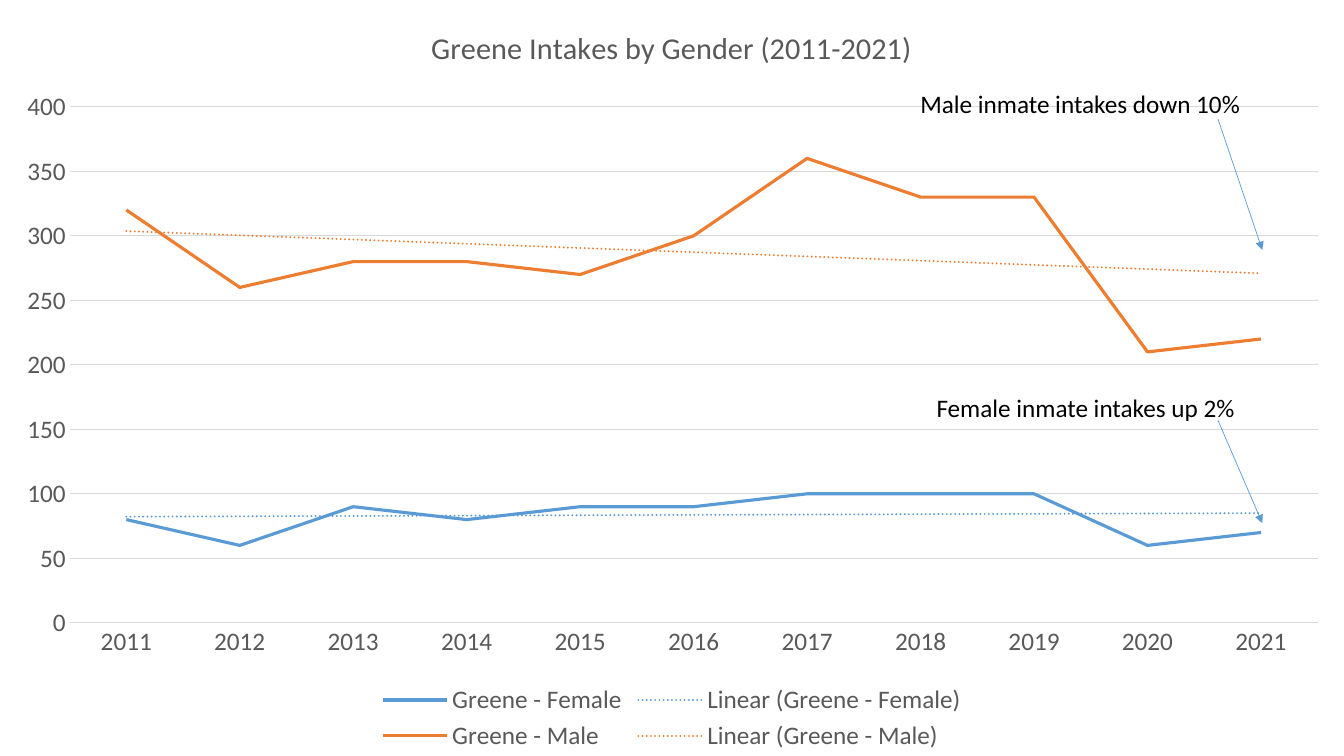
from lxml import etree
from pptx import Presentation
from pptx.chart.data import CategoryChartData
from pptx.dml.color import RGBColor
from pptx.enum.chart import XL_CHART_TYPE, XL_LEGEND_POSITION, XL_MARKER_STYLE, XL_TICK_MARK
from pptx.enum.text import MSO_AUTO_SIZE
from pptx.oxml import parse_xml
from pptx.oxml.ns import nsdecls, qn
from pptx.util import Inches, Pt

FONT = "Calibri"
BLUE, ORANGE, GRAY, GRID, BLACK = "5B9BD5", "ED7D31", "595959", "D9D9D9", "000000"
WIDTH, HEIGHT = 13.33, 7.5
YEARS = [str(year) for year in range(2011, 2022)]
INTAKES = [
    ("Greene - Female", BLUE, [80, 60, 90, 80, 90, 90, 100, 100, 100, 60, 70]),
    ("Greene - Male", ORANGE, [320, 260, 280, 280, 270, 300, 360, 330, 330, 210, 220]),
]


def rgb(color):
    return RGBColor.from_string(color)


def set_font(font, size, color):
    font.name, font.size, font.bold = FONT, Pt(size), False
    font.color.rgb = rgb(color)


def set_line(line, color, width):
    line.color.rgb = rgb(color)
    line.width = Pt(width)


def add_trend(series, color):
    trend = parse_xml(
        f'<c:trendline {nsdecls("c", "a")}><c:spPr><a:ln w="{Pt(1.5)}" cap="rnd">'
        f'<a:solidFill><a:srgbClr val="{color}"/></a:solidFill><a:prstDash val="sysDot"/>'
        '</a:ln></c:spPr><c:trendlineType val="linear"/>'
        '<c:dispRSqr val="0"/><c:dispEq val="0"/></c:trendline>')
    series._element.find(qn("c:cat")).addprevious(trend)


def place_plot(chart, x, y, w, h):
    """Fix the inner plot area, given in inches on the slide-sized chart."""
    plot_area = chart._chartSpace.chart.plotArea
    for layout in plot_area.findall(qn("c:layout")):
        plot_area.remove(layout)
    plot_area.insert(0, parse_xml(
        f'<c:layout {nsdecls("c")}><c:manualLayout><c:layoutTarget val="inner"/>'
        '<c:xMode val="edge"/><c:yMode val="edge"/>'
        f'<c:x val="{x / WIDTH}"/><c:y val="{y / HEIGHT}"/>'
        f'<c:w val="{w / WIDTH}"/><c:h val="{h / HEIGHT}"/>'
        '</c:manualLayout></c:layout>'))


def style_axes(chart):
    years, counts = chart.category_axis, chart.value_axis
    for axis in (years, counts):
        axis.major_tick_mark = axis.minor_tick_mark = XL_TICK_MARK.NONE
        set_font(axis.tick_labels.font, 18, GRAY)
    set_line(years.format.line, GRID, 0.75)
    counts.format.line.fill.background()
    counts.minimum_scale, counts.maximum_scale, counts.major_unit = 0, 400, 50
    set_line(counts.major_gridlines.format.line, GRID, 0.75)


def add_intake_chart(slide, title):
    data = CategoryChartData()
    data.categories = YEARS
    for name, _, values in INTAKES:
        data.add_series(name, values)
    chart = slide.shapes.add_chart(XL_CHART_TYPE.LINE, 0, 0, Inches(WIDTH),
                                   Inches(HEIGHT), data).chart
    set_font(chart.font, 18, BLACK)
    chart.has_title = True
    p = chart.chart_title.text_frame.paragraphs[0]
    p.text = title
    set_font(p.font, 21.6, GRAY)
    chart.chart_title.include_in_layout = False

    chart.plots[0].vary_by_categories = False
    for series, (_, color, _) in zip(chart.series, INTAKES):
        series.smooth = False
        series.marker.style = XL_MARKER_STYLE.NONE
        set_line(series.format.line, color, 2.25)
        add_trend(series, color)
    style_axes(chart)
    place_plot(chart, 0.69, 1.06, 12.38, 5.12)

    chart.has_legend = True
    chart.legend.position = XL_LEGEND_POSITION.BOTTOM
    chart.legend.include_in_layout = False
    set_font(chart.legend.font, 18, GRAY)


def add_note(slide, text, x, y, w, wrap):
    tf = slide.shapes.add_textbox(Inches(x), Inches(y), Inches(w), Inches(0.4)).text_frame
    tf.word_wrap = wrap
    tf.auto_size = MSO_AUTO_SIZE.SHAPE_TO_FIT_TEXT
    p = tf.paragraphs[0]
    p.text = text
    set_font(p.font, 18, BLACK)


def add_arrow(slide, top, bottom):
    """Point from a note down to the end of a trend line."""
    arrow = slide.shapes.add_connector(1, Inches(12.08), Inches(top),
                                       Inches(12.52), Inches(bottom))
    set_line(arrow.line, BLUE, 0.5)
    etree.SubElement(arrow.line._get_or_add_ln(), qn("a:tailEnd"), type="triangle")
    etree.SubElement(arrow._element.spPr, qn("a:effectLst"))


def main():
    prs = Presentation()
    prs.slide_width, prs.slide_height = Inches(WIDTH), Inches(HEIGHT)
    slide = prs.slides.add_slide(prs.slide_layouts[6])
    add_intake_chart(slide, "Greene Intakes by Gender (2011-2021)")
    add_note(slide, "Male inmate intakes down 10%", 9.03, 0.83, 4.2, True)
    add_arrow(slide, 1.18, 2.48)
    add_note(slide, "Female inmate intakes up 2%", 9.19, 3.84, 3.19, False)
    add_arrow(slide, 4.17, 5.19)
    prs.save("out.pptx")


if __name__ == "__main__":
    main()
